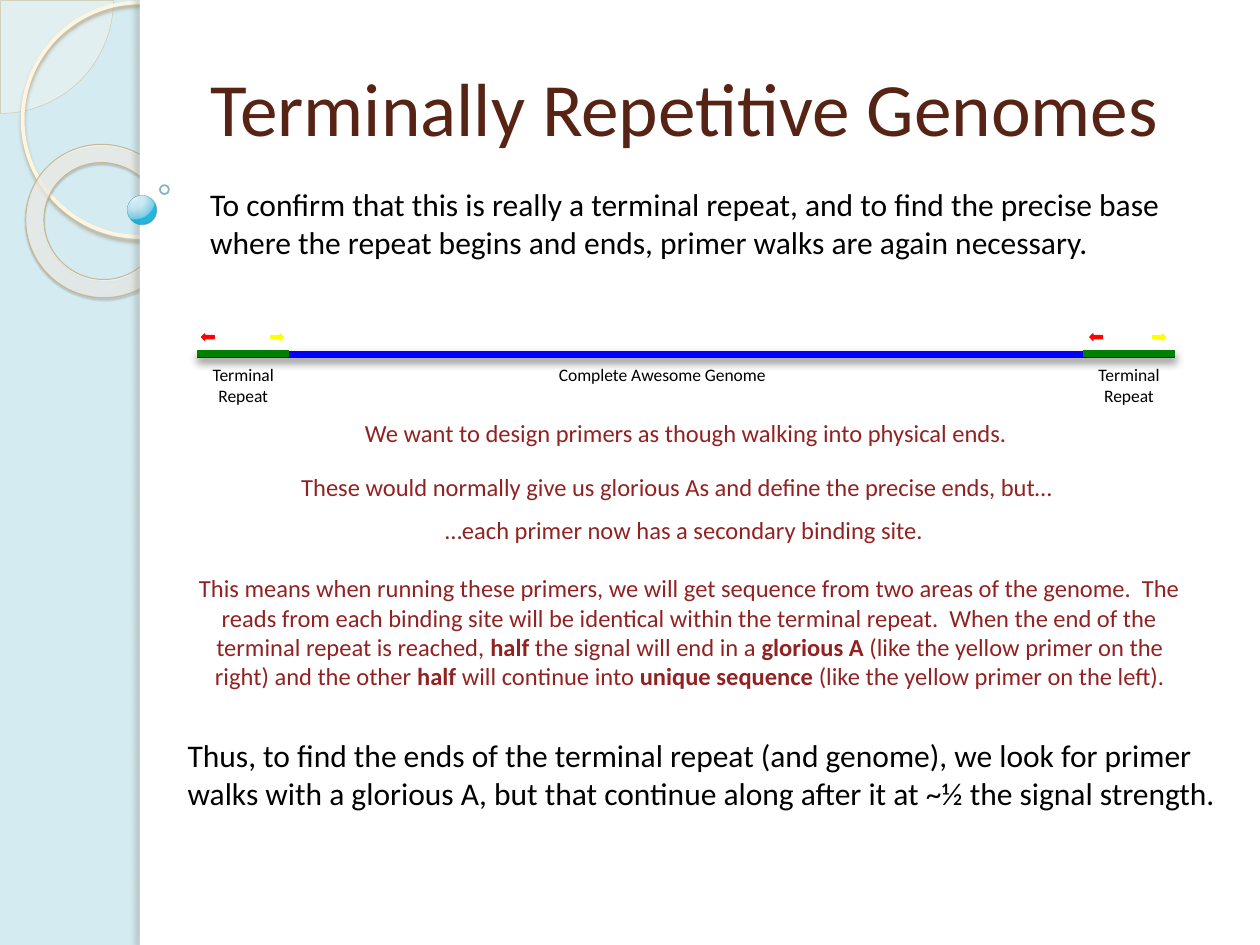
from lxml.etree import SubElement
from pptx import Presentation
from pptx.dml.color import RGBColor
from pptx.enum.shapes import MSO_SHAPE
from pptx.enum.text import MSO_ANCHOR, MSO_AUTO_SIZE, PP_ALIGN
from pptx.oxml.ns import qn
from pptx.util import Inches, Pt


def color(value):
    return RGBColor.from_string(value)


def add_color(parent, value, opacity):
    element = SubElement(parent, qn("a:srgbClr"), val=value)
    SubElement(element, qn("a:alpha"), val=str(opacity * 1000))


class SlideBuilder:
    font = "Calibri"
    black, title_brown, red = "000000", "572314", "922222"

    def __init__(self, slide):
        self.slide = slide

    def background(self, value):
        fill = self.slide.background.fill
        fill.solid()
        fill.fore_color.rgb = color(value)

    def shape(self, kind, left, top, width, height, fill=None, line=None,
              line_width=0.75, fill_opacity=100, line_opacity=100):
        shape = self.slide.shapes.add_shape(
            kind, Inches(left), Inches(top), Inches(width), Inches(height))
        shape.shadow.inherit = False
        properties = shape._element.spPr
        for paint, value, opacity, owner in (
                (shape.fill, fill, fill_opacity, lambda: properties),
                (shape.line.fill, line, line_opacity, lambda: properties.find(qn("a:ln")))):
            if value is None:
                paint.background()
                continue
            paint.solid()
            paint.fore_color.rgb = color(value)
            if opacity < 100:
                solid = owner().find(qn("a:solidFill"))
                solid.remove(solid[0])
                add_color(solid, value, opacity)
        if line:
            shape.line.width = Pt(line_width)
        return shape

    def shadow(self, shape, value, opacity, blur, distance, angle):
        effects = shape._element.spPr.find(qn("a:effectLst"))
        outer = SubElement(effects, qn("a:outerShdw"), blurRad=str(Pt(blur)),
                           dist=str(Pt(distance)), dir=str(angle * 60000),
                           algn="ctr", rotWithShape="0")
        add_color(outer, value, opacity)

    def radial_gradient(self, shape, stops, focus):
        properties = shape._element.spPr
        empty_fill = properties.find(qn("a:noFill"))
        gradient = SubElement(properties, qn("a:gradFill"), rotWithShape="1")
        properties.replace(empty_fill, gradient)
        stop_list = SubElement(gradient, qn("a:gsLst"))
        for position, value, opacity in stops:
            stop = SubElement(stop_list, qn("a:gs"), pos=str(position * 1000))
            add_color(stop, value, opacity)
        circle = SubElement(gradient, qn("a:path"))
        circle.set("path", "circle")
        SubElement(circle, qn("a:fillToRect"),
                   {side: str(value * 1000) for side, value in zip("ltrb", focus)})

    def text(self, left, top, width, height, runs, size, text_color=black,
             align=PP_ALIGN.CENTER, anchor=MSO_ANCHOR.TOP, grow=True):
        box = self.slide.shapes.add_textbox(
            Inches(left), Inches(top), Inches(width), Inches(height))
        frame = box.text_frame
        frame.word_wrap = True
        frame.auto_size = MSO_AUTO_SIZE.SHAPE_TO_FIT_TEXT if grow else MSO_AUTO_SIZE.NONE
        frame.vertical_anchor = anchor
        paragraph = frame.paragraphs[0]
        paragraph.alignment = align
        # Every second run is bold
        for index, words in enumerate(runs):
            run = paragraph.add_run()
            run.text = words
            run.font.name = self.font
            run.font.size = Pt(size)
            run.font.bold = index % 2 == 1
            run.font.color.rgb = color(text_color)


def add_decoration(builder):
    # Circles on the side band
    pie = builder.shape(MSO_SHAPE.PIE, -0.89, -0.89, 1.79, 1.79, "FEFAF4",
                        "D3C39F", 0.25, fill_opacity=33)
    pie.adjustments[0], pie.adjustments[1] = 0, 54.02
    circle = builder.shape(MSO_SHAPE.OVAL, 0.18, 0.02, 1.86, 1.86,
                           line="FFF5DE", line_width=2.15)
    builder.shadow(circle, "B0A68F", 85, 2, 2, 90)
    ring = builder.shape(MSO_SHAPE.DONUT, 0.2, 1.15, 1.23, 1.21,
                         line="C7B893", line_width=0.58)
    ring.adjustments[0] = 0.12
    ring.rotation = 38.6
    builder.radial_gradient(
        ring, [(0, "FFFCF6", 70), (70, "FFFEFB", 55), (100, "F0D28E", 60)],
        (-408, -50, 508, 150))
    builder.shadow(ring, "5A5444", 35, 1, 1.2, 75)

    # White page with a shaded left edge
    builder.shape(MSO_SHAPE.RECTANGLE, 1.11, 0, 8.89, 7.5, "FFFFFF")
    edge = builder.shape(MSO_SHAPE.RECTANGLE, 1.11, 0, 0.08, 7.5, "FFFFFF")
    builder.shadow(edge, "736F63", 25, 3, 3, 180)

    # Bubbles
    bubble = builder.shape(MSO_SHAPE.OVAL, 1.01, 1.55, 0.23, 0.23,
                           line="308EA5", line_width=0.16, line_opacity=60)
    builder.radial_gradient(
        bubble, [(0, "DAF4FF", 95), (50, "C3E3F0", 90),
                 (95, "6BC7E8", 88), (100, "00ABD5", 85)], (25, 12, 75, 88))
    builder.shape(MSO_SHAPE.OVAL, 1.27, 1.47, 0.07, 0.07,
                  line="318093", line_width=1, line_opacity=60)


def add_genome(builder):
    left, width, repeat_width = 1.57, 7.75, 0.72
    blue, green, red, yellow = "0000FF", "008000", "FF0000", "FFFF00"
    genome = builder.shape(MSO_SHAPE.RECTANGLE, left, 2.79, width, 0.05, blue, blue)
    builder.shadow(genome, "000000", 43, 5, 2, 90)
    builder.text(3.83, 2.84, 2.85, 0.44, ["Complete Awesome Genome"], 10)
    for repeat_left in (left, left + width - repeat_width):
        builder.text(repeat_left, 2.84, repeat_width, 0.61, ["Terminal Repeat"], 10)
        builder.shape(MSO_SHAPE.RECTANGLE, repeat_left, 2.78, repeat_width, 0.05,
                      green, green)

    # Primers
    for kind, value, primer_lefts in ((MSO_SHAPE.LEFT_ARROW, red, (1.6, 8.65)),
                                      (MSO_SHAPE.RIGHT_ARROW, yellow, (2.15, 9.15))):
        for primer_left in primer_lefts:
            builder.shape(kind, primer_left, 2.65, 0.1, 0.05, value, value)


def add_wording(builder):
    builder.text(1.57, 0.39, 8.1, 0.86, ["Terminally Repetitive Genomes"], 43,
                 builder.title_brown, PP_ALIGN.LEFT, MSO_ANCHOR.BOTTOM, grow=False)

    # Opening and conclusion
    for left, top, width, words in (
            (1.57, 1.42, 8.1,
             "To confirm that this is really a terminal repeat, and to find the precise "
             "base where the repeat begins and ends, primer walks are again necessary."),
            (1.39, 5.79, 8.39,
             "Thus, to find the ends of the terminal repeat (and genome), we look for "
             "primer walks with a glorious A, but that continue along after it at ~½ "
             "the signal strength.")):
        builder.text(left, top, width, 0.88, [words], 18, align=PP_ALIGN.LEFT)

    # Reasoning
    for left, top, words in (
            (1.57, 3.27, "We want to design primers as though walking into physical ends."),
            (1.5, 3.7, "These would normally give us glorious As and define the precise "
                       "ends, but…"),
            (1.6, 4.04, "…each primer now has a secondary binding site.  ")):
        builder.text(left, top, 7.75, 0.34, [words], 14, builder.red)
    builder.text(1.39, 4.5, 8.17, 1.04, [
        "This means when running these primers, we will get sequence from two areas of "
        "the genome.  The reads from each binding site will be identical within the "
        "terminal repeat.  When the end of the terminal repeat is reached, ",
        "half", " the signal will end in a ", "glorious A ",
        "(like the yellow primer on the right) and the other ", "half ",
        "will continue into ", "unique sequence ",
        "(like the yellow primer on the left)."], 14, builder.red)


def main():
    presentation = Presentation()
    presentation.slide_width, presentation.slide_height = Inches(10), Inches(7.5)
    builder = SlideBuilder(presentation.slides.add_slide(presentation.slide_layouts[6]))
    builder.background("D4EBF1")
    add_decoration(builder)
    add_genome(builder)
    add_wording(builder)
    presentation.save("out.pptx")


if __name__ == "__main__":
    main()
